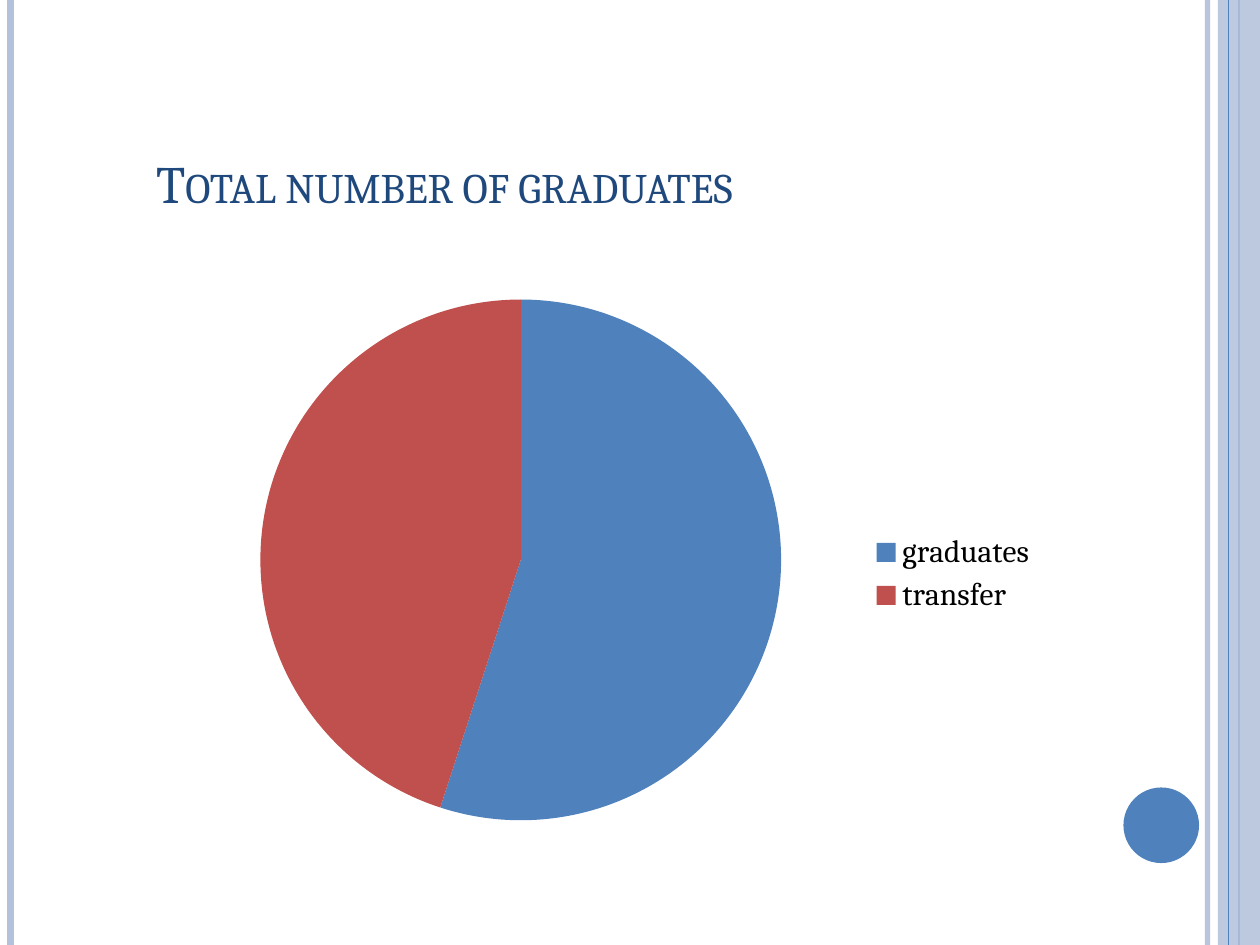
"""Build a slide with a pie chart of graduates and transfers."""
from lxml import etree
from pptx import Presentation
from pptx import util as u
from pptx.chart import data as chart_data
from pptx.dml import color
from pptx.enum import chart as charts, shapes, text
from pptx.oxml import ns, parse_xml

COLORS = {"pale": "B3C1DB", "blue": "4F81BD", "red": "C0504D", "navy": "1F497D", "black": "000000"}
FONT = "Cambria"
HEIGHT = 540


def paint(fill, name, alpha=100):
    fill.solid()
    fill.fore_color.rgb = color.RGBColor.from_string(COLORS[name])
    if alpha < 100:
        tint = fill._xPr.find(".//" + ns.qn("a:srgbClr"))
        etree.SubElement(tint, ns.qn("a:alpha"), val=str(alpha * 1000))


def set_font(font, size, name):
    for key, value in {"name": FONT, "size": u.Pt(size), "bold": False}.items():
        setattr(font, key, value)
    font.color.rgb = color.RGBColor.from_string(COLORS[name])


deck = Presentation()
deck.slide_width, deck.slide_height = u.Pt(720), u.Pt(HEIGHT)
slide = deck.slides.add_slide(deck.slide_layouts[5])

stripes = [
    (690, "pale", 3, 93),
    (6, "pale", 4.5, 100),
    (708, "blue", 1.5, 100),
    (702, "blue", 0.75, 100),
]
bands = [
    (shapes.MSO_SHAPE.RECTANGLE, (696, 0, 24, HEIGHT), "pale", 87),
    (shapes.MSO_SHAPE.OVAL, (642, 450, 43.2, 43.2), "blue", 100),
]


for order, (x, name, width, alpha) in enumerate(stripes):
    if order == 3:
        for kind, place, band_color, band_alpha in bands:
            band = slide.shapes.add_shape(kind, *map(u.Pt, place))
            band.shadow.inherit = False
            paint(band.fill, band_color, band_alpha)
            band.line.fill.background()
    stripe = slide.shapes.add_connector(
        shapes.MSO_CONNECTOR.STRAIGHT, u.Pt(x), u.Pt(0), u.Pt(x), u.Pt(HEIGHT))
    stripe.line.width = u.Pt(width)
    paint(stripe.line.fill, name, alpha)
    etree.SubElement(stripe._element.spPr, ns.qn("a:effectLst"))

title = slide.shapes.title
for key, value in {"left": 82, "top": 36, "width": 458, "height": 90}.items():
    setattr(title, key, u.Pt(value))
frame = title.text_frame
frame.text = "Total number of graduates"
frame_format = {
    "word_wrap": True,
    "auto_size": text.MSO_AUTO_SIZE.NONE,
    "vertical_anchor": text.MSO_ANCHOR.BOTTOM,
}
for key, value in frame_format.items():
    setattr(frame, key, value)
heading = frame.paragraphs[0]
heading.alignment = text.PP_ALIGN.LEFT
set_font(heading.runs[0].font, 30, "navy")
heading.runs[0]._r.get_or_add_rPr().set("cap", "small")

shares = chart_data.CategoryChartData()
shares.categories = ["graduates", "transfer"]
shares.add_series("Series 1", (55, 45))
pie = slide.shapes.add_chart(
    charts.XL_CHART_TYPE.PIE, *map(u.Pt, (120, 168, 480, 320)), shares).chart
pie.has_title = False
pie.has_legend = True
legend_format = {"position": charts.XL_LEGEND_POSITION.RIGHT, "include_in_layout": False}
for key, value in legend_format.items():
    setattr(pie.legend, key, value)
for font in (pie.font, pie.legend.font):
    set_font(font, 18, "black")

plot = pie.plots[0]
plot.vary_by_categories = True
for index, name in enumerate(("blue", "red")):
    paint(plot.series[0].points[index].format.fill, name)

area = pie._chartSpace.find(".//" + ns.qn("c:plotArea"))
for old in area.findall(ns.qn("c:layout")):
    area.remove(old)
layout = {"layoutTarget": "inner", "xMode": "edge", "yMode": "edge",
          "x": 0.06, "y": 0.01, "w": 0.62, "h": 0.93}
rules = "".join(f'<c:{key} val="{value}"/>' for key, value in layout.items())
area.insert(0, parse_xml(
    f'<c:layout {ns.nsdecls("c")}><c:manualLayout>{rules}</c:manualLayout></c:layout>'))

deck.save("out.pptx")
